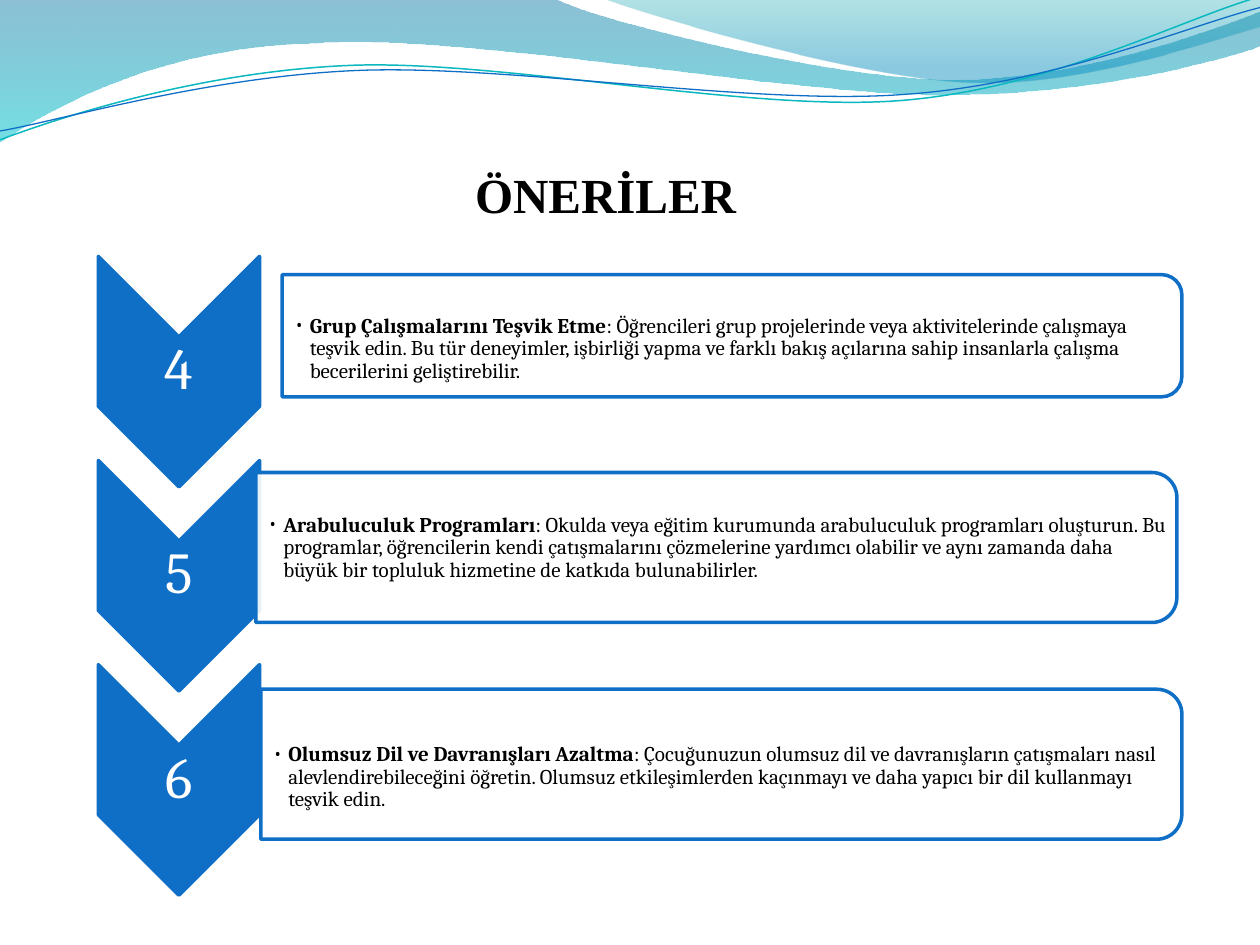
from lxml import etree
from pptx import Presentation
from pptx.dml.color import RGBColor
from pptx.enum.shapes import MSO_SHAPE
from pptx.enum.text import MSO_ANCHOR, PP_ALIGN
from pptx.oxml.ns import qn
from pptx.util import Inches, Pt

CHEVRON = MSO_SHAPE.CHEVRON
ROUNDED_END = MSO_SHAPE.ROUND_2_SAME_RECTANGLE
MIDDLE = MSO_ANCHOR.MIDDLE
LEFT, CENTER = PP_ALIGN.LEFT, PP_ALIGN.CENTER

BLUE, TEAL, WHITE, BLACK = "0F6FC6", "0AB8BF", "FFFFFF", "000000"
BODY_FONT, TITLE_FONT = "Cambria", "Times New Roman"

TITLE = "ÖNERİLER"
SUGGESTIONS = [
    {"number": "4", "heading": "Grup Çalışmalarını Teşvik Etme",
     "detail": ": Öğrencileri grup projelerinde veya aktivitelerinde çalışmaya teşvik edin. "
               "Bu tür deneyimler, işbirliği yapma ve farklı bakış açılarına sahip insanlarla "
               "çalışma becerilerini geliştirebilir.",
     "frame": (2.24, 2.18, 7.14, 0.97), "top_inset": 0.23},
    {"number": "5", "heading": "Arabuluculuk Programları",
     "detail": ": Okulda veya eğitim kurumunda arabuluculuk programları oluşturun. "
               "Bu programlar, öğrencilerin kendi çatışmalarını çözmelerine yardımcı olabilir "
               "ve aynı zamanda daha büyük bir topluluk hizmetine de katkıda bulunabilirler.",
     "frame": (2.03, 3.75, 7.31, 1.19), "top_inset": 0.03},
    {"number": "6", "heading": "Olumsuz Dil ve Davranışları Azaltma",
     "detail": ": Çocuğunuzun olumsuz dil ve davranışların çatışmaları nasıl "
               "alevlendirebileceğini öğretin. Olumsuz etkileşimlerden kaçınmayı ve daha "
               "yapıcı bir dil kullanmayı teşvik edin.",
     "frame": (2.07, 5.47, 7.31, 1.19), "top_inset": 0.23},
]

WAVE_BANDS = [
    ([(0, 0), (4.4, -0.01), (4.76, 0.17, 6.64, 0.63, 7.58, 0.63),
      (8.53, 0.63, 9.58, 0.26, 10, 0.09), (10.01, 0.36),
      (9.83, 0.44, 8.7, 0.76, 7.46, 0.75), (6.22, 0.75, 3.82, 0.28, 2.57, 0.34),
      (1.29, 0.36, 0.46, 0.83, -0.01, 1.13)],
     [(0, "0074A1", 45), (1, "00C6CF", 55)]),
    ([(4.79, -0.01), (5.09, 0.11, 6.82, 0.62, 7.69, 0.65),
      (8.56, 0.69, 9.61, 0.32, 10, 0.21), (10, 0)],
     [(0, "00A1A9", 30), (0.8, "008BBF", 45)]),
]
WAVE_LINES = [
    ([(0, 1.11), (0.48, 0.93, 1.58, 0.57, 2.77, 0.52),
      (3.95, 0.47, 5.93, 0.89, 7.13, 0.8), (8.33, 0.71, 9.38, 0.15, 9.98, -0.02)], TEAL, 0.85),
    ([(0, 1.04), (0.47, 0.96, 1.64, 0.61, 2.83, 0.56),
      (4.03, 0.51, 5.97, 0.84, 7.17, 0.75), (8.36, 0.67, 9.41, 0.21, 10, 0.06)], BLUE, 0.75),
]

CHEVRON_LENGTH, CHEVRON_WIDTH = 1.83, 1.28
CHEVRON_CENTER_X, FIRST_CENTER_Y, ROW_PITCH = 1.42, 2.95, 1.62


def rgb(color):
    return RGBColor.from_string(color)


def set_alpha(color_element, percent):
    etree.SubElement(color_element, qn("a:alpha"), val=str(percent * 1000))


def add_wave(slide, pieces, close):
    ends = [(Inches(piece[-2]), Inches(piece[-1])) for piece in pieces]
    builder = slide.shapes.build_freeform(*ends[0])
    builder.add_line_segments(ends[1:], close=close)
    shape = builder.convert_to_shape()
    shape.shadow.inherit = False
    segments = list(shape._element.iter(qn("a:lnTo")))
    for segment, piece in zip(segments, pieces[1:]):
        if len(piece) == 6:
            bend_segment(shape, segment, piece)
    return shape


def bend_segment(shape, segment, piece):
    curve = etree.Element(qn("a:cubicBezTo"))
    for x, y in zip(piece[::2], piece[1::2]):
        etree.SubElement(curve, qn("a:pt"), x=str(Inches(x) - shape.left),
                         y=str(Inches(y) - shape.top))
    segment.getparent().replace(segment, curve)


def add_band(slide, pieces, stops):
    shape = add_wave(slide, pieces, True)
    shape.line.fill.background()
    shape.fill.gradient()
    shape.fill.gradient_angle = 270
    for stop, (position, color, alpha) in zip(shape.fill.gradient_stops, stops):
        stop.position = position
        stop.color.rgb = rgb(color)
    elements = list(shape._element.spPr.iter(qn("a:srgbClr")))
    for element, (position, color, alpha) in zip(elements, stops):
        set_alpha(element, alpha)


def add_wave_line(slide, pieces, color, width):
    shape = add_wave(slide, pieces, False)
    shape.fill.background()
    shape.line.color.rgb = rgb(color)
    shape.line.width = Pt(width)


def add_turned_shape(slide, kind, center_x, center_y, length, breadth, fill):
    shape = slide.shapes.add_shape(kind, Inches(center_x - length / 2),
                                   Inches(center_y - breadth / 2),
                                   Inches(length), Inches(breadth))
    shape.rotation = 90
    shape.shadow.inherit = False
    shape.fill.solid()
    shape.fill.fore_color.rgb = rgb(fill)
    shape.line.color.rgb = rgb(BLUE)
    shape.line.width = Pt(2)
    return shape


def add_text(slide, bounds, insets, runs, size, color, alignment):
    box = slide.shapes.add_textbox(*map(Inches, bounds))
    frame = box.text_frame
    frame.word_wrap = True
    frame.vertical_anchor = MIDDLE
    (frame.margin_left, frame.margin_top,
     frame.margin_right, frame.margin_bottom) = map(Inches, insets)
    paragraph = frame.paragraphs[0]
    paragraph.alignment = alignment
    paragraph.line_spacing = 0.9
    for text, bold in runs:
        run = paragraph.add_run()
        run.text = text
        style_font(run.font, BODY_FONT, size, color, bold)
    return paragraph


def style_font(font, name, size, color, bold):
    font.name = name
    font.size = Pt(size)
    font.bold = bold
    font.color.rgb = rgb(color)


def add_bullet(paragraph):
    paragraph.level = 1
    properties = paragraph._p.get_or_add_pPr()
    properties.set("marL", str(Inches(0.12)))
    properties.set("indent", str(-Inches(0.12)))
    etree.SubElement(properties, qn("a:buFont"), typeface=BODY_FONT)
    etree.SubElement(properties, qn("a:buChar"), char="•")


def add_suggestion(slide, row, item):
    center_y = FIRST_CENTER_Y + row * ROW_PITCH
    add_turned_shape(slide, CHEVRON, CHEVRON_CENTER_X, center_y,
                     CHEVRON_LENGTH, CHEVRON_WIDTH, BLUE)
    label_bounds = (CHEVRON_CENTER_X - CHEVRON_WIDTH / 2, center_y - 0.28, CHEVRON_WIDTH, 0.55)
    add_text(slide, label_bounds, [0.02] * 4, [(item["number"], False)], 33, WHITE, CENTER)
    left, top, width, height = item["frame"]
    card = add_turned_shape(slide, ROUNDED_END, left + width / 2, top + height / 2,
                            height, width, WHITE)
    set_alpha(card._element.spPr.find(qn("a:solidFill"))[0], 90)
    paragraph = add_text(slide, (left, top + 0.05, width - 0.06, height - 0.11),
                         (0.1, item["top_inset"], 0.01, 0.01),
                         [(item["heading"], True), (item["detail"], False)], 12, BLACK, LEFT)
    add_bullet(paragraph)


def add_title(slide):
    title = slide.shapes.title
    title.left, title.top, title.width, title.height = map(Inches, (3.67, 1.25, 3.36, 0.57))
    title.text_frame.text = TITLE
    paragraph = title.text_frame.paragraphs[0]
    paragraph.alignment = LEFT
    style_font(paragraph.runs[0].font, TITLE_FONT, 28, BLACK, True)


def main():
    presentation = Presentation()
    presentation.slide_width, presentation.slide_height = Inches(10), Inches(7.5)
    slide = presentation.slides.add_slide(presentation.slide_layouts[5])
    for pieces, stops in WAVE_BANDS:
        add_band(slide, pieces, stops)
    for pieces, color, width in WAVE_LINES:
        add_wave_line(slide, pieces, color, width)
    for row, item in enumerate(SUGGESTIONS):
        add_suggestion(slide, row, item)
    add_title(slide)
    presentation.save("out.pptx")


if __name__ == "__main__":
    main()
